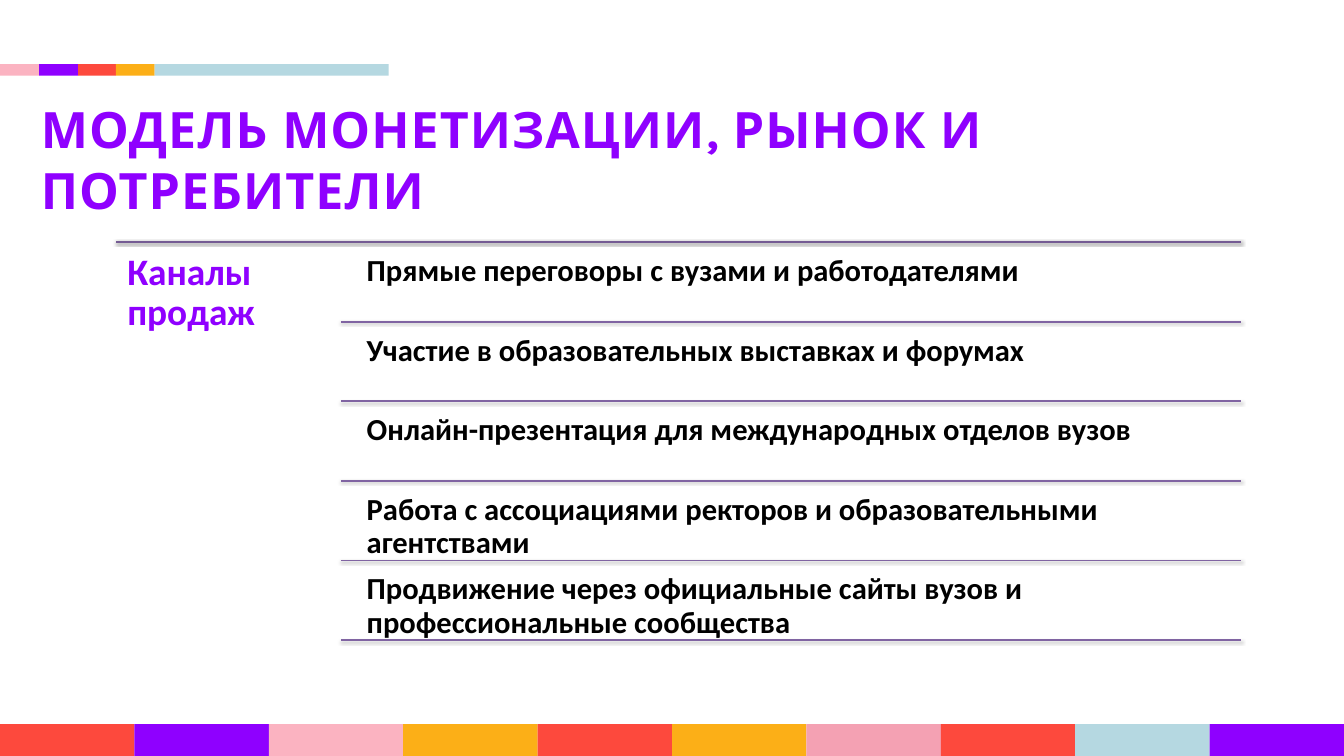
from dataclasses import dataclass

from lxml import etree
from pptx import Presentation
from pptx.dml.color import RGBColor
from pptx.enum.shapes import MSO_CONNECTOR, MSO_SHAPE
from pptx.enum.text import MSO_ANCHOR, MSO_AUTO_SIZE
from pptx.oxml import parse_xml
from pptx.oxml.ns import nsdecls
from pptx.util import Cm, Pt

RECTANGLE = MSO_SHAPE.RECTANGLE
STRAIGHT = MSO_CONNECTOR.STRAIGHT
TOP = MSO_ANCHOR.TOP
GROW = MSO_AUTO_SIZE.SHAPE_TO_FIT_TEXT

PINK = RGBColor(0xFB, 0xB3, 0xC1)
ROSE = RGBColor(0xF4, 0xA1, 0xB3)
VIOLET = RGBColor(0x8F, 0x00, 0xFF)
RED = RGBColor(0xFD, 0x49, 0x3D)
AMBER = RGBColor(0xFC, 0xAF, 0x17)
SKY = RGBColor(0xB5, 0xD8, 0xE1)
BLACK = RGBColor(0x00, 0x00, 0x00)
RULE = RGBColor(0x80, 0x64, 0xA2)
HEAD_RULE = RGBColor(0x74, 0x5B, 0x93)

HEADING_LEFT, ROW_LEFT, ROW_RIGHT = 4.83, 14.17, 51.59
TEXT_LEFT = 14.86
ROWS_TOP, ROW_PITCH = 10.06, 3.31
FOOTER_BAND = 5.585

SHADOW = (
    f'<a:effectLst {nsdecls("a")}>'
    '<a:outerShdw blurRad="40000" dist="20000" dir="5400000" rotWithShape="0">'
    '<a:srgbClr val="000000"><a:alpha val="38000"/></a:srgbClr>'
    '</a:outerShdw></a:effectLst>'
)


@dataclass
class Band:
    width: float
    color: RGBColor


@dataclass
class Style:
    font: str
    size: float
    color: RGBColor
    inset: float
    line_spacing: float = 1.0
    tracking: int = 0


HEADER = [
    Band(1.63, PINK),
    Band(1.62, VIOLET),
    Band(1.57, RED),
    Band(1.61, AMBER),
    Band(9.72, SKY),
]
FOOTER = [
    Band(FOOTER_BAND, color)
    for color in (RED, VIOLET, PINK, AMBER, RED, AMBER, ROSE, RED, SKY, VIOLET)
]
TITLE = Style("Karla", 59, VIOLET, 0.1, tracking=120)
HEADING = Style("Calibri", 44, VIOLET, 0.46, 0.9)
CHANNEL = Style("Calibri", 36, BLACK, 0.38, 0.9)
CHANNELS = [
    "Прямые переговоры с вузами и работодателями",
    "Участие в образовательных выставках и форумах",
    "Онлайн-презентация для международных отделов вузов",
    "Работа с ассоциациями ректоров и образовательными агентствами",
    "Продвижение через официальные сайты вузов и профессиональные сообщества",
]


def add_bands(s, bands: list[Band], top: float, height: float) -> None:
    left = 0.0
    for band in bands:
        sp = s.shapes.add_shape(
            RECTANGLE, Cm(left), Cm(top), Cm(band.width), Cm(height)
        )
        sp.shadow.inherit = False
        sp.fill.solid()
        sp.fill.fore_color.rgb = band.color
        sp.line.fill.background()
        left += band.width


def add_text(s, text: str, left: float, top: float, width: float,
             height: float, style: Style):
    sp = s.shapes.add_textbox(Cm(left), Cm(top), Cm(width), Cm(height))
    tf = sp.text_frame
    tf.word_wrap = True
    tf.vertical_anchor = TOP
    tf.margin_left = tf.margin_right = Cm(style.inset)
    tf.margin_top = tf.margin_bottom = Cm(style.inset)
    p = tf.paragraphs[0]
    p.line_spacing = style.line_spacing
    r = p.add_run()
    r.text = text
    r.font.name = style.font
    r.font.size = Pt(style.size)
    r.font.bold = True
    r.font.color.rgb = style.color
    if style.tracking:
        r._r.get_or_add_rPr().set("spc", str(style.tracking))
    return sp


def add_rule(s, left: float, y: float, color: RGBColor) -> None:
    line = s.shapes.add_connector(
        STRAIGHT, Cm(left), Cm(y), Cm(ROW_RIGHT), Cm(y)
    )
    line.line.color.rgb = color
    line.line.width = Pt(2)
    line.element.spPr.append(parse_xml(etree.tostring(etree.fromstring(SHADOW))))


def main() -> None:
    prs = Presentation()
    prs.slide_width, prs.slide_height = Cm(55.85), Cm(31.42)
    s = prs.slides.add_slide(prs.slide_layouts[6])

    add_bands(s, HEADER, 2.67, 0.48)
    add_bands(s, FOOTER, 30.1, 1.32)

    title = add_text(s, "МОДЕЛЬ МОНЕТИЗАЦИИ, РЫНОК И ПОТРЕБИТЕЛИ",
                     1.6, 4.06, 53.04, 2.67, TITLE)
    title.text_frame.margin_top = Cm(0.05)
    title.text_frame.auto_size = GROW

    add_rule(s, HEADING_LEFT, ROWS_TOP, HEAD_RULE)
    add_text(s, "Каналы продаж", HEADING_LEFT, ROWS_TOP,
             ROW_LEFT - HEADING_LEFT, 16.71, HEADING)
    for i, channel in enumerate(CHANNELS):
        top = ROWS_TOP + i * ROW_PITCH
        add_text(s, channel, TEXT_LEFT, top + 0.16,
                 ROW_RIGHT - TEXT_LEFT, 3.15, CHANNEL)
        add_rule(s, ROW_LEFT, top + ROW_PITCH, RULE)

    prs.save("out.pptx")


if __name__ == "__main__":
    main()
